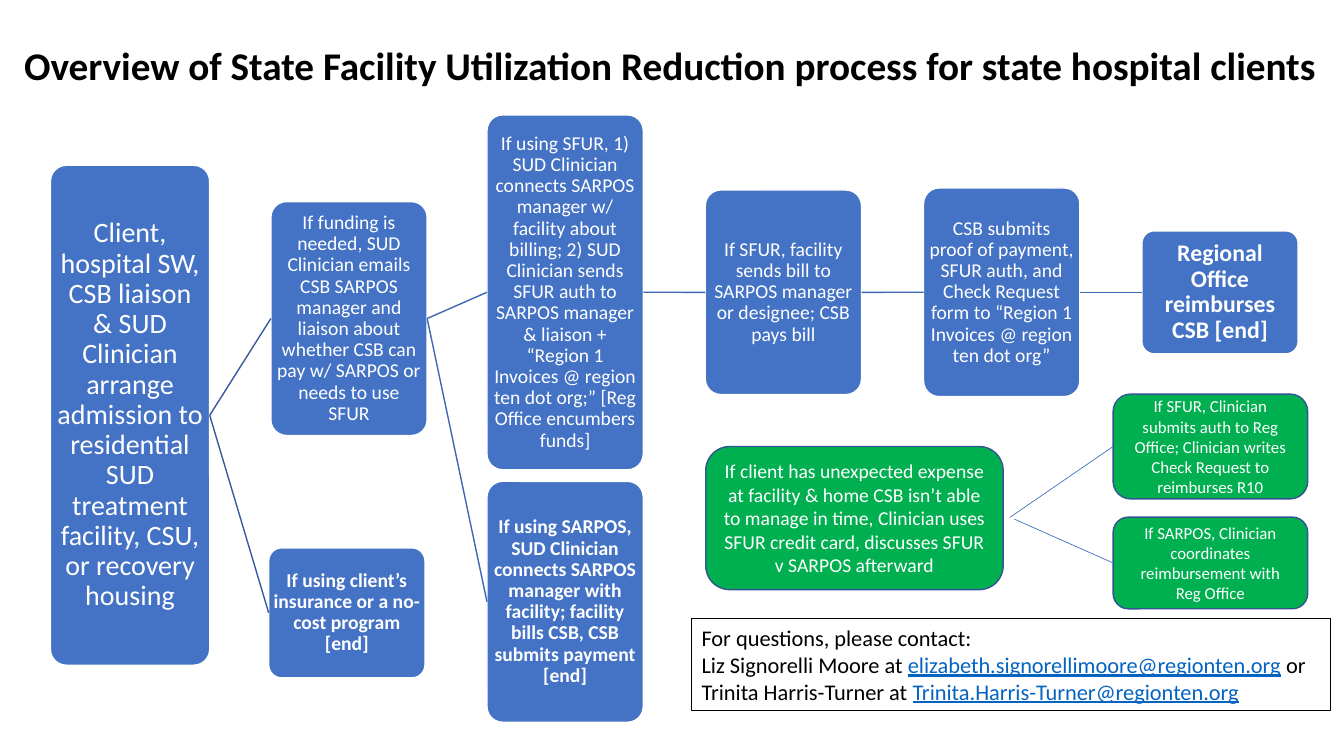
from lxml import etree
from pptx import Presentation
from pptx.dml.color import RGBColor
from pptx.enum.shapes import MSO_CONNECTOR, MSO_SHAPE
from pptx.enum.text import MSO_ANCHOR, PP_ALIGN
from pptx.oxml.ns import qn
from pptx.util import Inches, Pt

STRAIGHT = MSO_CONNECTOR.STRAIGHT
ROUNDED, RECT = MSO_SHAPE.ROUNDED_RECTANGLE, MSO_SHAPE.RECTANGLE
ALTERNATE = MSO_SHAPE.FLOWCHART_ALTERNATE_PROCESS
MIDDLE, CENTER = MSO_ANCHOR.MIDDLE, PP_ALIGN.CENTER
LEFT_SIDE, RIGHT_SIDE = 1, 3

FONT = "Calibri"
BLACK = RGBColor(0x00, 0x00, 0x00)
WHITE = RGBColor(0xFF, 0xFF, 0xFF)
BLUE = RGBColor(0x44, 0x72, 0xC4)
DARK_BLUE = RGBColor(0x36, 0x5B, 0x9D)
MID_BLUE = RGBColor(0x3E, 0x67, 0xB2)
GREEN = RGBColor(0x00, 0xB0, 0x50)
GREEN_EDGE = RGBColor(0x32, 0x54, 0x91)
LINK = RGBColor(0x05, 0x63, 0xC1)

# Slide size, and the grid of the process flow
W, H = Inches(13.33), Inches(7.5)
LEFT, COLUMN, BOX_W = Inches(0.5), Inches(2.165), Inches(1.55)
ROW = Inches(0.1)


def share(x, y):
    """Turn percentages of the slide's width and height into lengths."""
    return int(W * x / 100), int(H * y / 100)


def style(p, size, color, bold=False):
    p.font.name, p.font.size, p.font.bold = FONT, Pt(size), bold
    p.font.color.rgb = color


def add_box(s, kind, frame, fill, edge, text, size, bold=False):
    sp = s.shapes.add_shape(kind, *frame)
    sp.shadow.inherit = False
    sp.fill.solid()
    sp.fill.fore_color.rgb = fill
    sp.line.color.rgb, sp.line.width = edge, Pt(1)
    tf = sp.text_frame
    tf.word_wrap, tf.vertical_anchor = True, MIDDLE
    p = tf.paragraphs[0]
    p.text, p.alignment = text, CENTER
    style(p, size, WHITE, bold)
    return sp


def add_step(s, column, middle, rows, text, size=14, bold=False, width=BOX_W):
    """Blue step, centred on a grid row and a given number of rows high."""
    frame = (int(LEFT + column * COLUMN), int((middle - rows / 2) * ROW),
             width, int(rows * ROW))
    sp = add_box(s, ROUNDED, frame, BLUE, WHITE, text, size, bold)
    sp.adjustments[0] = 0.1
    tf = sp.text_frame
    tf.margin_left = tf.margin_right = Inches(0.01)
    tf.margin_top = tf.margin_bottom = Inches(0.01)
    tf.paragraphs[0].line_spacing = 0.9
    return sp


def add_green(s, x, y, w, h, text, size):
    return add_box(s, ALTERNATE, share(x, y) + share(w, h),
                   GREEN, GREEN_EDGE, text, size)


def add_link(s, target, color, width, source=None, start=(0, 0)):
    """Line to a box's left side, from another box or from a free point."""
    c = s.shapes.add_connector(STRAIGHT, *share(*start), target.left, target.top)
    if source is not None:
        c.begin_connect(source, RIGHT_SIDE)
    c.end_connect(target, LEFT_SIDE)
    c.line.color.rgb, c.line.width = color, Pt(width)
    etree.SubElement(c._element.spPr, qn("a:effectLst"))


def add_title(s, text):
    tf = s.shapes.add_textbox(*share(1.05, 4.8), *share(97.9, 7.6)).text_frame
    tf.word_wrap = True
    p = tf.paragraphs[0]
    p.text = text
    style(p, 28, BLACK, True)


def add_contacts(s):
    sp = s.shapes.add_textbox(*share(51.46, 81.87), *share(47.56, 12.13))
    sp.line.color.rgb, sp.line.width = BLACK, Pt(0.75)
    tf = sp.text_frame
    tf.word_wrap = True
    tf.paragraphs[0].text = "For questions, please contact:"
    people = tf.add_paragraph()
    for lead, address in (
        ("Liz Signorelli Moore at ", "elizabeth.signorellimoore@regionten.org"),
        (" or Trinita Harris-Turner at ", "Trinita.Harris-Turner@regionten.org"),
    ):
        for text, is_address in ((lead, False), (address, True)):
            r = people.add_run()
            r.text = text
            r.font.underline = is_address
            r.font.color.rgb = LINK if is_address else BLACK
    for p in tf.paragraphs:
        style(p, 16, BLACK)
        for r in p.runs:
            r.font.size, r.font.name = Pt(16), FONT


def add_process(s):
    admission = add_step(
        s, 0, 41.2, 49.6,
        "Client, hospital SW, CSB liaison & SUD Clinician arrange admission to "
        "residential SUD treatment facility, CSU, or recovery housing",
        20, width=Inches(1.58))
    funding = add_step(
        s, 1.01, 31.6, 23.2,
        "If funding is needed, SUD Clinician emails CSB SARPOS manager and "
        "liaison about whether CSB can pay w/ SARPOS or needs to use SFUR")
    insurance = add_step(
        s, 1, 60.8, 12.9,
        "If using client’s insurance or a no-cost program [end]", bold=True)
    sfur = add_step(
        s, 2, 29, 35.2,
        "If using SFUR, 1) SUD Clinician connects SARPOS manager w/ facility "
        "about billing; 2) SUD Clinician sends SFUR auth to SARPOS manager & "
        "liaison + “Region 1 Invoices @ region ten dot org;” "
        "[Reg Office encumbers funds]")
    sarpos = add_step(
        s, 2, 59.7, 23.9,
        "If using SARPOS, SUD Clinician connects SARPOS manager with facility; "
        "facility bills CSB, CSB submits payment [end]", bold=True)
    bill = add_step(
        s, 3, 29, 20.3,
        "If SFUR, facility sends bill to SARPOS manager or designee; "
        "CSB pays bill")
    proof = add_step(
        s, 4, 29, 20.7,
        "CSB submits proof of payment, SFUR auth, and Check Request form to "
        "“Region 1 Invoices @ region ten dot org”")
    refund = add_step(
        s, 5, 29, 12.2, "Regional Office reimburses CSB [end]", 17, True)

    for target in (funding, insurance):
        add_link(s, target, DARK_BLUE, 1, admission)
    for source, target in ((funding, sfur), (funding, sarpos), (sfur, bill),
                           (bill, proof), (proof, refund)):
        add_link(s, target, MID_BLUE, 1, source)


def add_unexpected_expense(s):
    add_green(s, 52.51, 59.07, 22.13, 18.93,
              "If client has unexpected expense at facility & home CSB isn’t "
              "able to manage in time, Clinician uses SFUR credit card, "
              "discusses SFUR v SARPOS afterward", 14)
    by_sfur = add_green(s, 82.82, 52.13, 14.48, 13.87,
                        "If SFUR, Clinician submits auth to Reg Office; "
                        "Clinician writes Check Request to reimburses R10", 12)
    by_sarpos = add_green(s, 82.82, 68.4, 14.48, 12.13,
                          "If SARPOS, Clinician coordinates reimbursement "
                          "with Reg Office", 12)
    add_link(s, by_sarpos, BLUE, 0.5, start=(75.47, 68.67))
    add_link(s, by_sfur, BLUE, 0.5, start=(75.17, 68.4))


def main():
    prs = Presentation()
    prs.slide_width, prs.slide_height = W, H
    s = prs.slides.add_slide(prs.slide_layouts[6])
    add_process(s)
    add_title(s, "Overview of State Facility Utilization Reduction process "
                 "for state hospital clients")
    add_contacts(s)
    add_unexpected_expense(s)
    prs.save("out.pptx")


if __name__ == "__main__":
    main()
